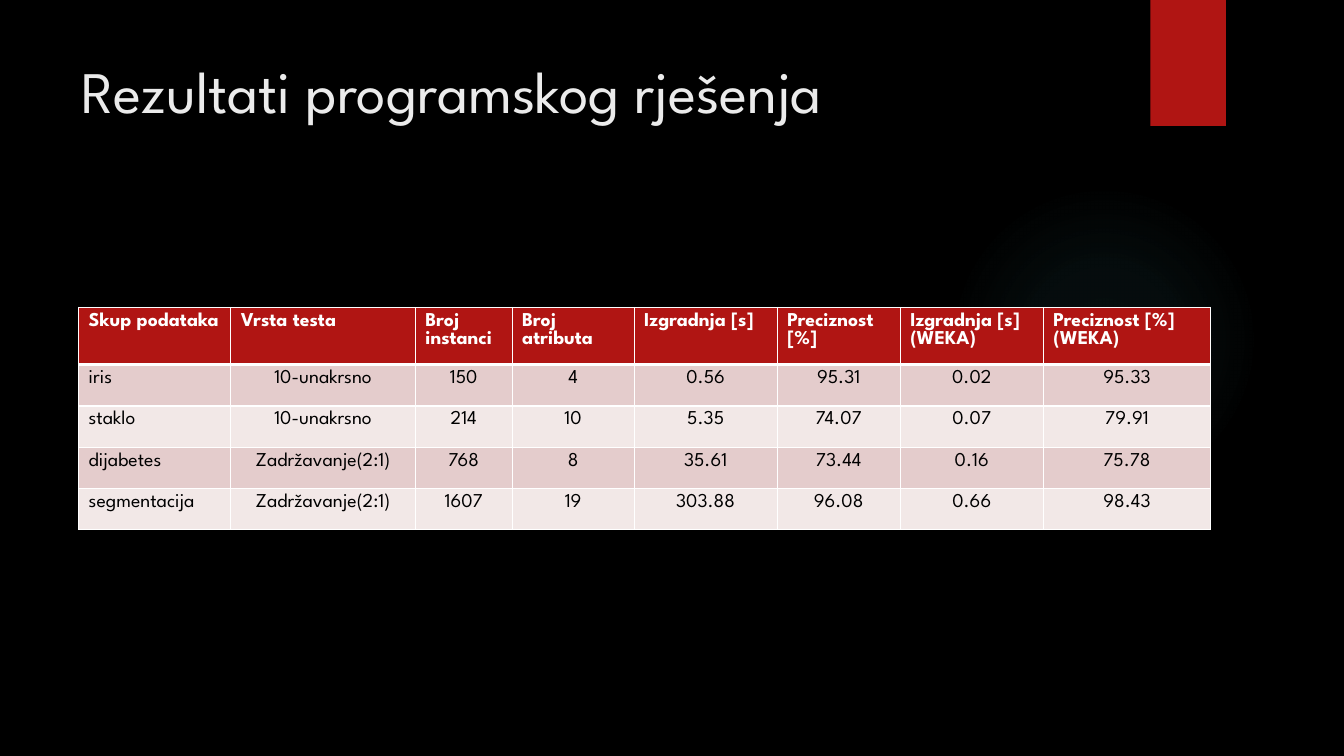
from dataclasses import dataclass

from lxml import etree
from pptx import Presentation
from pptx.dml.color import RGBColor
from pptx.enum.shapes import MSO_SHAPE
from pptx.enum.text import MSO_ANCHOR, PP_ALIGN
from pptx.oxml import parse_xml
from pptx.oxml.ns import nsdecls, qn
from pptx.util import Inches, Pt

OVAL, RECT = MSO_SHAPE.OVAL, MSO_SHAPE.RECTANGLE
TOP, LEFT, CENTER = MSO_ANCHOR.TOP, PP_ALIGN.LEFT, PP_ALIGN.CENTER


@dataclass(frozen=True)
class Theme:
    font: str = "League Spartan"
    back: str = "000000"
    red: str = "B01513"
    glow: str = "50B9C1"
    title: str = "EBEBEB"
    white: str = "FFFFFF"
    ink: str = "000000"
    bands: tuple = ("E4CCCC", "F2E8E7")
    big: int = 42
    small: int = 14


HEAD = ["Skup podataka", "Vrsta testa", "Broj instanci", "Broj atributa",
        "Izgradnja [s]", "Preciznost [%]", "Izgradnja [s] (WEKA)",
        "Preciznost [%] (WEKA)"]
ROWS = [
    ["iris", "10-unakrsno", "150", "4", "0.56", "95.31", "0.02", "95.33"],
    ["staklo", "10-unakrsno", "214", "10", "5.35", "74.07", "0.07", "79.91"],
    ["dijabetes", "Zadržavanje(2:1)", "768", "8", "35.61", "73.44", "0.16", "75.78"],
    ["segmentacija", "Zadržavanje(2:1)", "1607", "19", "303.88", "96.08", "0.66", "98.43"],
]
WIDTHS = [1.51, 1.83, 0.96, 1.21, 1.42, 1.22, 1.42, 1.66]


class Deck:
    """Draws styled elements on the current slide."""

    def __init__(self, theme):
        self.theme = theme
        self.show = Presentation()
        self.show.slide_width, self.show.slide_height = Inches(13.33), Inches(7.5)
        self.slide = self.show.slides.add_slide(self.show.slide_layouts[6])
        fill = self.slide.background.fill
        fill.solid()
        fill.fore_color.rgb = RGBColor.from_string(theme.back)

    def shape(self, kind, box, color):
        shape = self.slide.shapes.add_shape(kind, *map(Inches, box))
        shape.shadow.inherit = False
        shape.fill.solid()
        shape.fill.fore_color.rgb = RGBColor.from_string(color)
        shape.line.fill.background()
        return shape

    def glow(self, box, color, stops):
        props = self.shape(OVAL, box, color).element.spPr
        marks = "".join(
            f'<a:gs pos="{pos * 1000}"><a:srgbClr val="{color}">'
            f'<a:alpha val="{alpha * 1000}"/></a:srgbClr></a:gs>'
            for pos, alpha in stops)
        fill = parse_xml(
            f'<a:gradFill {nsdecls("a")}><a:gsLst>{marks}</a:gsLst>'
            '<a:path path="circle"><a:fillToRect l="50000" t="50000" '
            'r="50000" b="50000"/></a:path></a:gradFill>')
        props.replace(props.find(qn("a:solidFill")), fill)

    def style(self, par, size, color, bold=False, align=LEFT):
        par.alignment = align
        font = par.font
        font.name, font.size, font.bold = self.theme.font, Pt(size), bold
        font.color.rgb = RGBColor.from_string(color)

    def title(self, box, text):
        frame = self.slide.shapes.add_textbox(*map(Inches, box)).text_frame
        frame.word_wrap = True
        frame.vertical_anchor = TOP
        frame.margin_top = Inches(0.04)
        frame.text = text
        self.style(frame.paragraphs[0], self.theme.big, self.theme.title)

    def border(self, cell, base):
        props = cell._tc.get_or_add_tcPr()
        sides = {"lnL": 1, "lnR": 1, "lnT": 1, "lnB": base}
        for spot, (side, width) in enumerate(sides.items()):
            line = etree.Element(qn(f"a:{side}"), w=str(Pt(width)))
            fill = etree.SubElement(line, qn("a:solidFill"))
            etree.SubElement(fill, qn("a:srgbClr"), val=self.theme.white)
            props.insert(spot, line)

    def cell(self, cell, text, fill, color, bold, align, base):
        cell.text = text
        cell.fill.solid()
        cell.fill.fore_color.rgb = RGBColor.from_string(fill)
        par = cell.text_frame.paragraphs[0]
        self.style(par, self.theme.small, color, bold, align)
        font = par.runs[0].font
        font.name, font.size = self.theme.font, Pt(self.theme.small)
        self.border(cell, base)

    def table(self, left, top, widths, heights, head, rows):
        theme = self.theme
        box = map(Inches, (left, top, sum(widths), sum(heights)))
        table = self.slide.shapes.add_table(len(heights), len(widths), *box).table
        for col, width in zip(table.columns, widths):
            col.width = Inches(width)
        for row, height in zip(table.rows, heights):
            row.height = Inches(height)
        for x, text in enumerate(head):
            self.cell(table.cell(0, x), text, theme.red, theme.white, True, LEFT, 3)
        for y, row in enumerate(rows):
            for x, text in enumerate(row):
                self.cell(table.cell(y + 1, x), text, theme.bands[y % 2], theme.ink,
                          False, CENTER if x else LEFT, 1)
        for x in range(len(widths)):
            edge = table.cell(1, x)._tc.tcPr.find(qn("a:lnT"))
            edge.set("w", str(Pt(3)))


def main():
    theme = Theme()
    deck = Deck(theme)
    deck.glow((9.41, 1.83, 3.08, 3.08), theme.glow, [(0, 7), (36, 6), (69, 0)])
    deck.shape(RECT, (11.41, 0, 0.75, 1.25), theme.red)
    deck.title((0.71, 0.5, 10.29, 1.53), "Rezultati programskog rješenja")
    deck.table(0.78, 3.05, WIDTHS, [0.45] + [0.41] * len(ROWS), HEAD, ROWS)
    deck.show.save("out.pptx")


if __name__ == "__main__":
    main()
